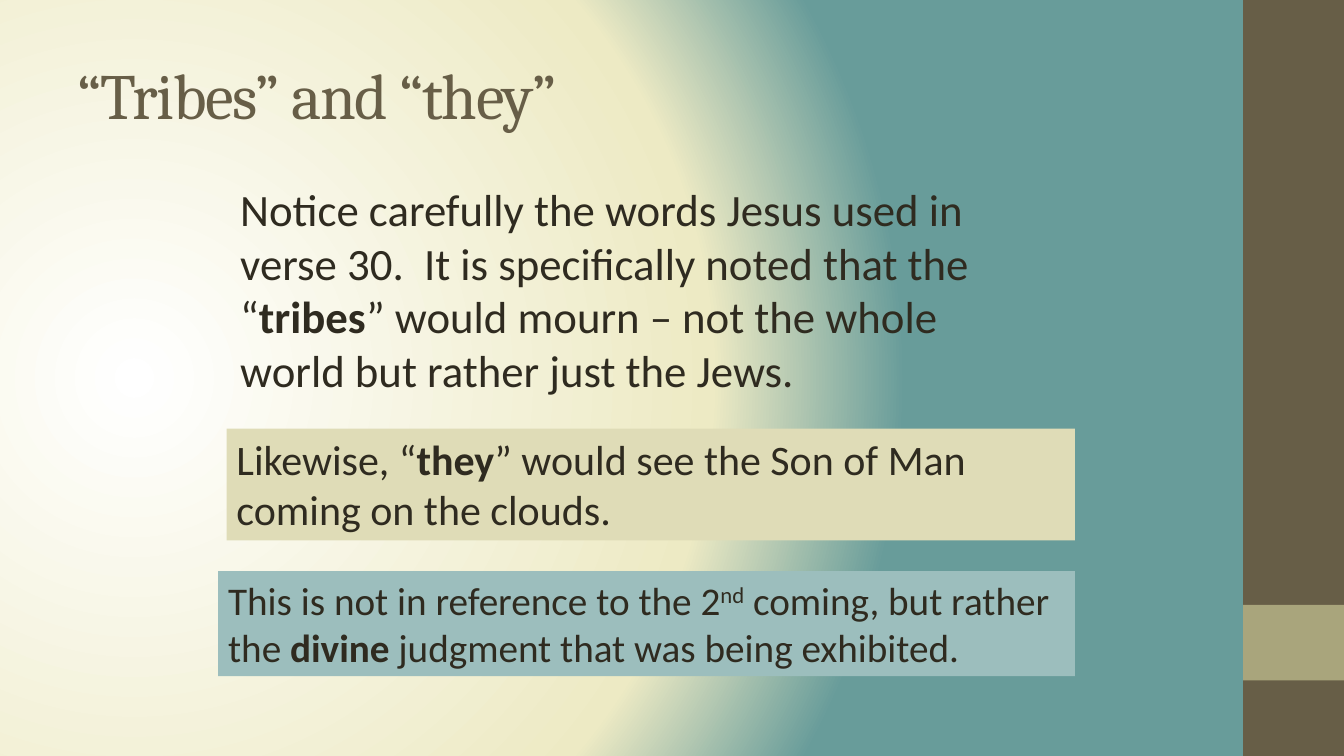
from lxml.etree import SubElement
from pptx import Presentation
from pptx.dml.color import RGBColor
from pptx.enum.shapes import MSO_SHAPE
from pptx.enum.text import MSO_ANCHOR as ANCHOR, MSO_AUTO_SIZE as AUTO, PP_ALIGN as ALIGN
from pptx.oxml import parse_xml
from pptx.oxml.ns import nsdecls, qn
from pptx.util import Cm, Pt

WIDTH, HEIGHT, BAR = 33.87, 19.05, 2.54
BROWN, OLIVE, INK = "675E47", "A9A57C", "2F2B20"
STOPS = [(0, "FFFFFF"), (75, "EDEAC4"), (100, "689C9A")]


def rgb(value):
    """Turn a hex string into a colour."""
    return RGBColor.from_string(value)


def place(sp, x, y, w, h):
    """Move a shape to a box given in centimetres."""
    sp.left, sp.top, sp.width, sp.height = Cm(x), Cm(y), Cm(w), Cm(h)


def add_run(p, text, size=28, font="Calibri", color=INK, bold=False, raised=0, spacing=0):
    """Add one formatted run to a paragraph."""
    r = p.add_run()
    r.text = text
    r.font.size, r.font.name, r.font.bold = Pt(size), font, bold
    r.font.color.rgb = rgb(color)
    rPr = r.font._element
    if raised:
        rPr.set("baseline", str(raised * 1000))
    if spacing:
        rPr.set("spc", str(spacing * 100))


def add_runs(p, runs, **fmt):
    """Add runs given as pairs of text and their own format."""
    for text, own in runs:
        add_run(p, text, **{**fmt, **own})


def add_rect(s, x, y, w, h, fill):
    """Add a plain filled rectangle."""
    sp = s.shapes.add_shape(MSO_SHAPE.RECTANGLE, Cm(x), Cm(y), Cm(w), Cm(h))
    sp.shadow.inherit = False
    sp.fill.solid()
    sp.fill.fore_color.rgb = rgb(fill)
    sp.line.fill.background()
    return sp


def add_background(s):
    """Fill the slide with a radial gradient."""
    stops = "".join(f'<a:gs pos="{pos * 1000}"><a:srgbClr val="{color}"/></a:gs>'
                    for pos, color in STOPS)
    s.element.cSld.insert(0, parse_xml(
        f'<p:bg {nsdecls("p", "a")}><p:bgPr><a:gradFill rotWithShape="1">'
        f'<a:gsLst>{stops}</a:gsLst><a:path path="circle">'
        '<a:fillToRect l="20000" t="50000" r="100000" b="50000"/></a:path>'
        '</a:gradFill><a:effectLst/></p:bgPr></p:bg>'))


def add_sidebar(s, x, y, w, h):
    """Draw the side band with its accent block."""
    add_rect(s, x, y, w, h, BROWN)
    add_rect(s, x, y + h * 0.8, w, h * 0.1, OLIVE)


def add_title(s, x, y, w, h, text):
    """Write the slide title."""
    sp = s.shapes.title
    place(sp, x, y, w, h)
    tf = sp.text_frame
    tf.auto_size, tf.vertical_anchor = AUTO.NONE, ANCHOR.MIDDLE
    p = tf.paragraphs[0]
    p.alignment = ALIGN.LEFT
    add_run(p, text, size=46, font="Cambria", color=BROWN, spacing=-1)


def add_body(s, x, y, w, h, runs):
    """Write the opening paragraph without a bullet."""
    sp = s.placeholders[1]
    place(sp, x, y, w, h)
    tf = sp.text_frame
    tf.auto_size, tf.vertical_anchor = AUTO.NONE, ANCHOR.TOP
    p = tf.paragraphs[0]
    p.space_before = Pt(0)
    pPr = p._p.get_or_add_pPr()
    pPr.set("marL", str(Cm(0.3)))
    pPr.set("indent", "0")
    SubElement(pPr, qn("a:buNone"))
    add_runs(p, runs, size=32)


def add_note(s, x, y, w, h, fill, runs, size):
    """Add a filled box with a remark."""
    tf = add_rect(s, x, y, w, h, fill).text_frame
    tf.word_wrap, tf.auto_size = True, AUTO.SHAPE_TO_FIT_TEXT
    tf.vertical_anchor = ANCHOR.TOP
    p = tf.paragraphs[0]
    p.alignment = ALIGN.LEFT
    add_runs(p, runs, size=size)


def main():
    """Build and save the slide."""
    prs = Presentation()
    prs.slide_width, prs.slide_height = Cm(WIDTH), Cm(HEIGHT)
    s = prs.slides.add_slide(prs.slide_layouts[1])
    add_background(s)
    add_sidebar(s, WIDTH - BAR, 0, BAR, HEIGHT)
    add_title(s, 1.7, 0.76, 28.22, 3.18, "“Tribes” and “they”")
    add_body(s, 5.5, 4.45, 21.17, 6.15, [
        ("Notice carefully the words Jesus used in verse 30.  "
         "It is specifically noted that the “", {}),
        ("tribes", {"bold": True}),
        ("” would mourn – not the whole world but rather just the Jews.", {}),
    ])
    add_note(s, 5.71, 10.8, 21.38, 2.82, "DFDCB7", [
        ("Likewise, “", {}),
        ("they", {"bold": True}),
        ("” would see the Son of Man coming on the clouds.", {}),
    ], size=30)
    add_note(s, 5.5, 14.39, 21.59, 2.65, "9CBEBD", [
        ("This is not in reference to the 2", {}),
        ("nd", {"raised": 30}),
        (" coming, but rather the ", {}),
        ("divine ", {"bold": True}),
        ("judgment that was being exhibited.", {}),
    ], size=28)
    prs.save("out.pptx")


if __name__ == "__main__":
    main()
